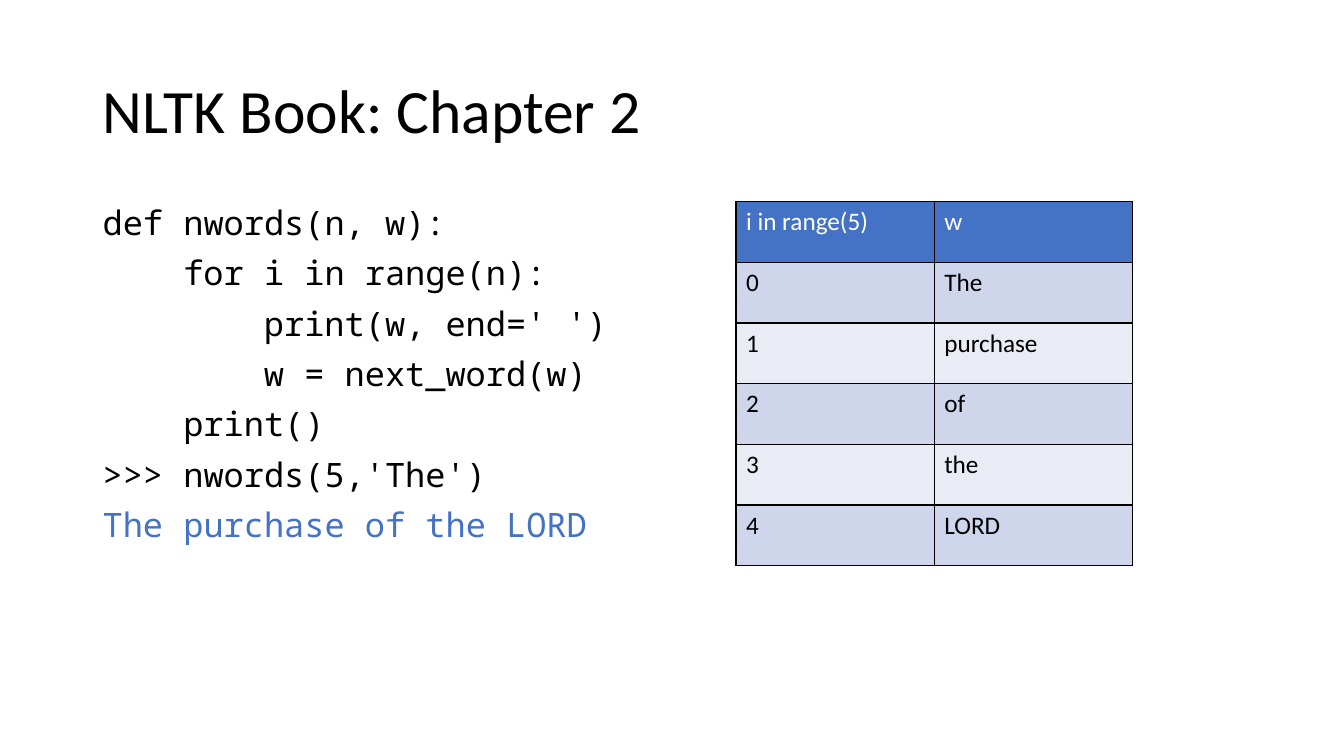
import pptx
import pptx.dml.color
import pptx.enum.text
import pptx.oxml
import pptx.oxml.ns
import pptx.util

theme = {
    "heading_font": "Calibri",
    "code_font": "Noto Sans Mono",
    "title_size": 44,
    "code_size": 24,
    "table_size": 18,
    "ink": "000000",
    "paper": "FFFFFF",
    "accent": "4472C4",
    "bands": ["CFD5EA", "E9EBF5"],
}

presentation = pptx.Presentation()
presentation.slide_width = pptx.util.Inches(13.33)
presentation.slide_height = pptx.util.Inches(7.5)
slide = presentation.slides.add_slide(presentation.slide_layouts[6])

column = presentation.slide_width / 100
row = presentation.slide_height / 100
left_margin = int(6.9 * column)
content_top = int(26.67 * row)
code_indent = pptx.util.Pt(4 * 0.6 * theme["code_size"])


def write(paragraph, text, *, size, font=theme["heading_font"], color=theme["ink"],
          line_spacing=1.0, space_before=0, indent=0):
    paragraph.line_spacing = line_spacing
    paragraph.space_before = pptx.util.Pt(space_before)
    properties = paragraph._p.get_or_add_pPr()
    properties.set("marL", str(int(indent)))
    properties.set("indent", "0")
    run = paragraph.add_run()
    run.text = text
    run.font.name = font
    run.font.size = pptx.util.Pt(size)
    run.font.bold = False
    run.font.color.rgb = pptx.dml.color.RGBColor.from_string(color)


title_box = slide.shapes.add_textbox(
    left_margin, int(5.33 * row), int(86.25 * column), int(19.33 * row))
title_box.text_frame.word_wrap = True
title_box.text_frame.vertical_anchor = pptx.enum.text.MSO_ANCHOR.MIDDLE
write(title_box.text_frame.paragraphs[0], "NLTK Book: Chapter 2",
      size=theme["title_size"], line_spacing=0.9)

code_lines = [
    (0, "def nwords(n, w):", theme["ink"]),
    (1, "for i in range(n):", theme["ink"]),
    (2, "print(w, end=' ')", theme["ink"]),
    (2, "w = next_word(w)", theme["ink"]),
    (1, "print()", theme["ink"]),
    (0, ">>> nwords(5,'The')", theme["ink"]),
    (0, "The purchase of the LORD", theme["accent"]),
]
code_box = slide.shapes.add_textbox(
    left_margin, content_top, int(46.36 * column), int(63.47 * row))
code_frame = code_box.text_frame
code_frame.word_wrap = True
for number, (level, text, color) in enumerate(code_lines):
    paragraph = code_frame.add_paragraph() if number else code_frame.paragraphs[0]
    write(paragraph, text, size=theme["code_size"], font=theme["code_font"], color=color,
          line_spacing=0.9, space_before=10, indent=level * code_indent)

words = ["The", "purchase", "of", "the", "LORD"]
table_rows = [("i in range(5)", "w")] + [(str(i), word) for i, word in enumerate(words)]
table = slide.shapes.add_table(
    len(table_rows), 2, int(54.76 * column), content_top,
    int(29.5 * column), int(48.16 * row)).table

for row_number, values in enumerate(table_rows):
    is_header = row_number == 0
    fill = theme["accent"] if is_header else theme["bands"][(row_number - 1) % 2]
    for column_number, text in enumerate(values):
        cell = table.cell(row_number, column_number)
        write(cell.text_frame.paragraphs[0], text, size=theme["table_size"],
              color=theme["paper"] if is_header else theme["ink"])
        properties = cell._tc.get_or_add_tcPr()
        for side in ("lnL", "lnR", "lnT", "lnB"):
            properties.append(pptx.oxml.parse_xml(
                f'<a:{side} {pptx.oxml.ns.nsdecls("a")} w="{pptx.util.Pt(1)}"><a:solidFill>'
                f'<a:srgbClr val="{theme["ink"]}"/></a:solidFill></a:{side}>'))
        cell.fill.solid()
        cell.fill.fore_color.rgb = pptx.dml.color.RGBColor.from_string(fill)

presentation.save("out.pptx")
